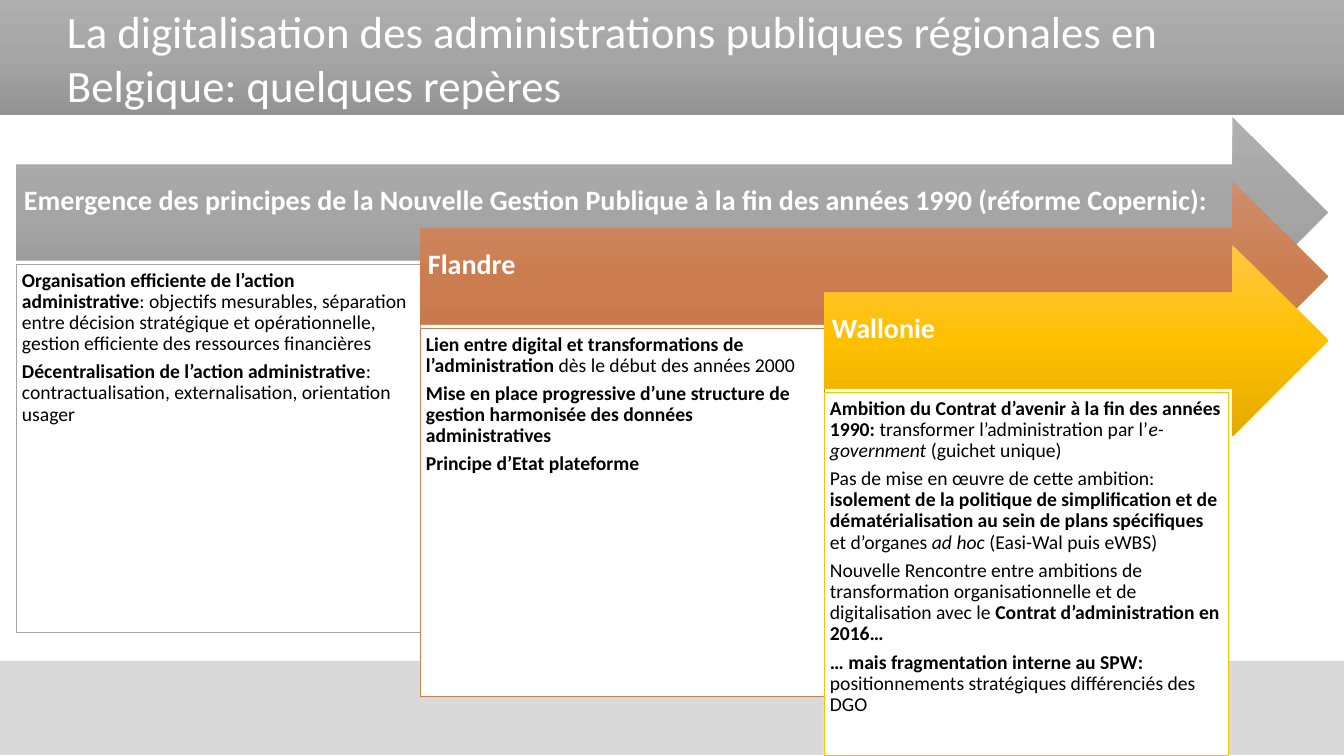
import copy

import pptx
import pptx.dml.color
import pptx.enum.shapes
import pptx.enum.text
import pptx.util

WIDE, HIGH = 1344, 756
SCALE = 12192000 / WIDE
SHAPE = pptx.enum.shapes.MSO_SHAPE
ANCHOR = pptx.enum.text.MSO_ANCHOR
FONT = "Calibri"

COLORS = {
    "white": "FFFFFF",
    "black": "000000",
    "foot": "D9D9D9",
    "gray": ["AFAFAF", "A5A5A5", "939393"],
    "orange": ["CF8E6C", "CB7D50", "C4774A"],
    "gold": ["FFC746", "FFC000", "E3AB00"],
}

TITLE = ("La digitalisation des administrations publiques régionales en "
         "Belgique: quelques repères")

STAGES = [
    ("Emergence des principes de la Nouvelle Gestion Publique à la fin des "
     "années 1990 (réforme Copernic):", "gray", 368, [
         [("Organisation efficiente de l’action administrative", "b"),
          (": objectifs mesurables, séparation entre décision stratégique et "
           "opérationnelle, gestion efficiente des ressources financières", "")],
         [("Décentralisation de l’action administrative", "b"),
          (": contractualisation, externalisation, orientation usager", "")],
     ]),
    ("Flandre", "orange", 368, [
        [("Lien entre digital et transformations de l’administration ", "b"),
         ("dès le début des années 2000", "")],
        [("Mise en place progressive d’une structure de gestion harmonisée "
          "des données administratives", "b")],
        [("Principe d’Etat plateforme", "b")],
    ]),
    ("Wallonie", "gold", 363, [
        [("Ambition du Contrat d’avenir à la fin des années 1990: ", "b"),
         ("transformer l’administration par l’", ""),
         ("e-government ", "i"), ("(guichet unique)", "")],
        [("Pas de mise en œuvre de cette ambition: ", ""),
         ("isolement de la politique de simplification et de "
          "dématérialisation au sein de plans spécifiques ", "b"),
         ("et d’organes ", ""), ("ad hoc ", "i"),
         ("(Easi-Wal puis eWBS)", "")],
        [("Nouvelle Rencontre entre ambitions de transformation "
          "organisationnelle et de digitalisation avec le ", ""),
         ("Contrat d’administration en 2016…", "b")],
        [("… mais fragmentation interne au SPW: ", "b"),
         ("positionnements stratégiques différenciés des DGO", "")],
    ]),
]


def px(count):
    return round(count * SCALE)


def tint(code):
    return pptx.dml.color.RGBColor.from_string(code)


def add_block(slide, kind, box, fill, edge=None):
    block = slide.shapes.add_shape(kind, *map(px, box))
    block.shadow.inherit = False
    if isinstance(fill, list):
        block.fill.gradient()
        block.fill.gradient_angle = 270
        stops = block._element.spPr.xpath(".//a:gsLst")[0]
        stops.append(copy.deepcopy(stops[0]))
        for stop, code, place in zip(block.fill.gradient_stops, fill, (0, 0.5, 1)):
            stop.color.rgb = tint(code)
            stop.position = place
    else:
        block.fill.solid()
        block.fill.fore_color.rgb = tint(fill)
    if edge:
        block.line.color.rgb = tint(edge)
        block.line.width = pptx.util.Pt(0.5)
    else:
        block.line.fill.background()
    return block


def write(block, paras, size, color, anchor, inset, spacing=0.9):
    frame = block.text_frame
    frame.word_wrap = True
    frame.vertical_anchor = anchor
    (frame.margin_left, frame.margin_top,
     frame.margin_right, frame.margin_bottom) = map(px, inset)
    for rank, parts in enumerate(paras):
        para = frame.add_paragraph() if rank else frame.paragraphs[0]
        para.alignment = pptx.enum.text.PP_ALIGN.LEFT
        para.line_spacing = spacing
        para.space_after = pptx.util.Pt(round(size * 0.35))
        for text, style in parts:
            run = para.add_run()
            run.text = text
            run.font.name = FONT
            run.font.size = pptx.util.Pt(size)
            run.font.color.rgb = tint(color)
            run.font.bold = style == "b"
            run.font.italic = style == "i"


def add_header(slide, box):
    band = add_block(slide, SHAPE.RECTANGLE, box, COLORS["gray"])
    write(band, [[(TITLE, "")]], 32, COLORS["white"], ANCHOR.MIDDLE,
          (67, 6, 6, 6), 1.0)
    band.text_frame.paragraphs[0].space_after = pptx.util.Pt(0)


def add_stage(slide, box, stage, width):
    left, top, _, height = box
    head, hue, depth, paras = stage
    arrow = add_block(slide, SHAPE.RIGHT_ARROW, box, COLORS[hue])
    write(arrow, [[(head, "b")]], 20, COLORS["white"], ANCHOR.MIDDLE,
          (8, 8, 28, 30))
    card = add_block(slide, SHAPE.RECTANGLE, (left, top + height * 0.77, width, depth),
                     COLORS["white"], COLORS[hue][1])
    write(card, paras, 14, COLORS["black"], ANCHOR.TOP, (6, 6, 6, 6))


def add_steps(slide, box):
    left, top, width, height = box
    step, drop = 404, 64
    for rank, stage in enumerate(STAGES):
        shift = rank * step
        add_stage(slide, (left + shift, top + rank * drop, width - shift, height),
                  stage, step)


def main():
    deck = pptx.Presentation()
    deck.slide_width, deck.slide_height = px(WIDE), px(HIGH)
    slide = deck.slides.add_slide(deck.slide_layouts[6])
    add_block(slide, SHAPE.RECTANGLE, (0, 661, WIDE, 94), COLORS["foot"])
    add_header(slide, (0, 0, WIDE, 115))
    add_steps(slide, (16, 117, 1312, 191))
    deck.save("out.pptx")


if __name__ == "__main__":
    main()
